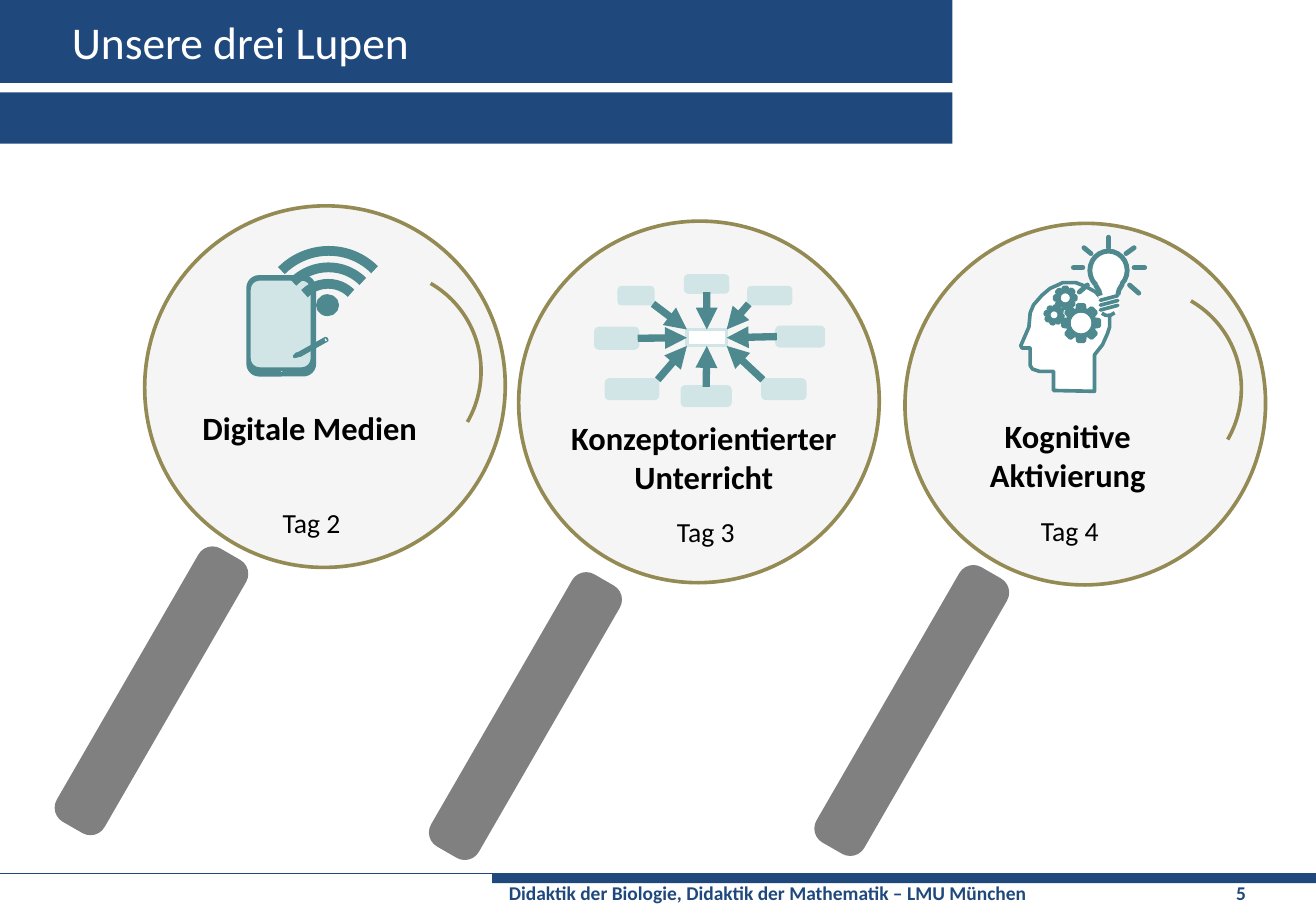
from math import cos, radians, sin

from lxml import etree
from pptx import Presentation
from pptx.dml.color import RGBColor
from pptx.enum.shapes import MSO_CONNECTOR, MSO_SHAPE
from pptx.enum.text import MSO_ANCHOR, MSO_AUTO_SIZE, PP_ALIGN
from pptx.oxml.ns import qn
from pptx.util import Pt

RECT, ROUND, OVAL = MSO_SHAPE.RECTANGLE, MSO_SHAPE.ROUNDED_RECTANGLE, MSO_SHAPE.OVAL
ARC, TOOTH, TIP = MSO_SHAPE.ARC, MSO_SHAPE.TRAPEZOID, MSO_SHAPE.ISOSCELES_TRIANGLE
STRAIGHT, LEFT, CENTER = MSO_CONNECTOR.STRAIGHT, PP_ALIGN.LEFT, PP_ALIGN.CENTER
TOP, MIDDLE = MSO_ANCHOR.TOP, MSO_ANCHOR.MIDDLE
W, H, FONT = 810.75, 567, "Calibri"
C = {"navy": "1F497D", "white": "FFFFFF", "black": "000000", "glass": "D9D9D9",
     "rim": "948A54", "handle": "808080", "teal": "4D898E", "pale": "D2E5E6"}

# Outlines of the head and the bulb
HEAD = [(20.2, 54.7), (11.5, 54.7), (7.2, 53.3), (5.8, 51.1), (5.8, 40.3), (0.7, 40.3), (0, 38.9),
        (5, 27.4), (5.8, 18.7), (7.9, 13.7), (13, 7.9), (18, 3.6), (23, 1.4), (25.9, 0), (33.8, 0),
        (39.6, 2.2), (46.1, 5.8), (50.4, 10.8), (54, 17.3), (54.7, 20.9), (54.7, 27.4),
        (53.3, 31.7), (50.4, 38.2), (45.4, 44.6), (45.4, 67), (20.2, 66.5)]
GLASS = [(5.8, 15.5), (-5, 17.6), (-5.8, 12.6), (-9.4, 7.6), (-11.5, 2.5), (-10.1, -6.1),
         (-6.5, -9.7), (0, -11.9), (6.5, -9.7), (10.8, -4.7), (12.2, -1.8), (11.5, 4.7), (7.2, 11.2)]
SOCKET = [(-5, 18.4), (-5, 24.1), (-3.6, 26.3), (0, 27.7), (4.3, 26.3), (5.8, 22), (5.8, 15.5)]
NECK = [[(-7.9, 9), (-5.8, 12.6), (-5, 15.5)], [(8.6, 8.3), (6.5, 11.9), (5.8, 14.8)]]
RAYS = [(-21.6, -1.8, -15.8, -1.8), (-18, 13.3, -13, 9), (-15.1, -14, -10.8, -10.4),
        (0, -14, 0, -20.5), (10.8, -10.4, 15.8, -14), (15.8, -1.8, 22.3, -1.8), (13, 9, 18.7, 14)]

# Network nodes: direction seen from the hub, then left, top, width, height
HUB = (56.2, 33.1, 24.5, 10.1)
NODES = [((0, -1), (55.4, 0, 25.9, 10.1)), ((-1, 0), (0, 32.4, 25.9, 12.2)),
         ((0, 1), (53.3, 68.4, 29.5, 11.5)), ((1, 0), (111.6, 31.7, 28.8, 11.5)),
         ((-1, -1), (14.4, 7.2, 20.9, 10.1)), ((-1, 1), (6.5, 64.1, 31.7, 11.5)),
         ((1, -1), (94.3, 7.2, 25.9, 10.1)), ((1, 1), (103, 64.1, 25.9, 11.5))]
SITES = {(0, -1): (2, 0), (-1, 0): (3, 1), (0, 1): (0, 2), (1, 0): (1, 3)}

def rgb(name):
    return RGBColor.from_string(C[name])

def paint(sp, fill, line, width):
    sp.shadow.inherit = False
    sp.fill.background()
    sp.line.fill.background()
    if fill:
        sp.fill.solid()
        sp.fill.fore_color.rgb = rgb(fill)
    if line:
        sp.line.color.rgb = rgb(line)
        sp.line.width = Pt(width)
    return sp

def shape(s, kind, x, y, w, h, fill=None, line=None, width=2, rot=0, adj=()):
    sp = s.shapes.add_shape(kind, Pt(x), Pt(y), Pt(w), Pt(h))
    sp.rotation = rot
    for i, value in enumerate(adj):
        sp.adjustments[i] = value
    return paint(sp, fill, line, width)

def centred(s, kind, cx, cy, w, h, *args, **kw):
    return shape(s, kind, cx - w / 2, cy - h / 2, w, h, *args, **kw)

def outline(s, x, y, points, fill, line, width, close=True):
    pts = [(Pt(x + px), Pt(y + py)) for px, py in points]
    fb = s.shapes.build_freeform(*pts[0])
    fb.add_line_segments(pts[1:], close=close)
    return paint(fb.convert_to_shape(), fill, line, width)

def line(s, x1, y1, x2, y2, color, width, arrow=False, cap="flat"):
    c = s.shapes.add_connector(STRAIGHT, Pt(x1), Pt(y1), Pt(x2), Pt(y2))
    c.line.color.rgb, c.line.width = rgb(color), Pt(width)
    ln = c._element.spPr.find(qn("a:ln"))
    ln.set("cap", cap)
    if arrow:
        etree.SubElement(ln, qn("a:tailEnd"), type="triangle")
    etree.SubElement(c._element.spPr, qn("a:effectLst"))
    return c

def text(s, x, y, w, h, lines, size, color, bold=False, align=LEFT, anchor=TOP, wrap=True):
    tf = s.shapes.add_textbox(Pt(x), Pt(y), Pt(w), Pt(h)).text_frame
    tf.word_wrap, tf.vertical_anchor = wrap, anchor
    tf.auto_size = MSO_AUTO_SIZE.NONE if wrap else MSO_AUTO_SIZE.SHAPE_TO_FIT_TEXT
    for i, words in enumerate(lines):
        p = tf.add_paragraph() if i else tf.paragraphs[0]
        p.alignment = align
        r = p.add_run()
        r.text = words
        r.font.name, r.font.size, r.font.bold = FONT, Pt(size), bold
        r.font.color.rgb = rgb(color)
    return tf

def header(s, x, y, w):
    shape(s, RECT, x, y, w, 51.1, "navy")
    shape(s, RECT, x, y + 56.9, w, 31.7, "navy")
    text(s, x + 37.2, y, w - 42.5, 51.1, ["Unsere drei Lupen"], 28, "white", anchor=MIDDLE)

def footer(s, x, y, w):
    bar = x + 303.1
    line(s, x, y, x + w, y, "navy", 0.75)
    shape(s, RECT, bar, y, w - 303.1, 5.8, "navy")
    words = "Didaktik der Biologie, Didaktik der Mathematik – LMU München\t5"
    tf = text(s, bar, y + 0.7, w - 303.1, 22.3, [words], 12, "navy", bold=True)
    tf.margin_left = Pt(10.4)
    tabs = etree.SubElement(tf.paragraphs[0]._p.get_or_add_pPr(), qn("a:tabLst"))
    etree.SubElement(tabs, qn("a:tab"), pos=str(Pt(448)), algn="l")

def lens(s, x, y, handle_y, handle_h, glint):
    glass = shape(s, OVAL, x, y, 221.8, 223.2, "glass", "rim", 2.25, rot=30)
    color = glass._element.spPr.find(qn("a:solidFill")).find(qn("a:srgbClr"))
    etree.SubElement(color, qn("a:alpha"), val="26000")
    shape(s, ROUND, x - 11.8, y + handle_y, 31.7, handle_h, "handle", "handle", 2.25, 30, [0.28])
    if glint:
        shape(s, ARC, x + 82.4, y + 39.6, 124.6, 125.3, None, "rim", 2.25, rot=30)

def caption(s, cx, y, w, lines, day, day_y):
    text(s, cx - w / 2, y, w, 7 + 24 * len(lines), lines, 20, "black", True, CENTER, wrap=False)
    text(s, cx - 24.8, day_y, 52, 27.4, [day], 17, "black", align=CENTER, wrap=False)

def tablet(s, x, y):
    shape(s, ROUND, x, y, 41, 60.5, "teal", "teal")
    shape(s, OVAL, x + 19.4, y + 56.9, 2.9, 2.9, "white", "teal")
    shape(s, ROUND, x + 0.7, y + 1.4, 38.9, 55.4, "pale", "teal")
    # Pen
    shape(s, RECT, x + 30.2, y + 42.5, 19.4, 1.4, "teal", "teal", rot=330.6)
    shape(s, TIP, x + 28.8, y + 47.5, 1.4, 2.2, "teal", "teal", rot=240.6)
    line(s, x + 47.5, y + 38.2, x + 48.2, y + 39.6, "white", 0.75)
    # Radio waves
    for size in (82, 61.5, 41):
        centred(s, ARC, x + 49, y + 24.6, size, size * 0.98, None, "teal", 6, rot=315)
    centred(s, OVAL, x + 49, y + 17.5, 12.2, 11.5, "teal", "teal")

def network(s, x, y):
    def edge(box, dx, dy):
        nx, ny, w, h = box
        return x + nx + w * (1 + dx) / 2, y + ny + h * (1 + dy) / 2

    hub = shape(s, RECT, x + HUB[0], y + HUB[1], *HUB[2:], "white", "pale")
    nodes = [shape(s, ROUND, x + nx, y + ny, w, h, "pale", "pale") for _, (nx, ny, w, h) in NODES]
    for sp, ((dx, dy), box) in zip(nodes, NODES):
        c = line(s, *edge(box, -dx, -dy), *edge(HUB, dx, dy), "teal", 4.5, arrow=True)
        if (dx, dy) in SITES:
            start, end = SITES[dx, dy]
            c.begin_connect(sp, start)
            c.end_connect(hub, end)

def gear(s, cx, cy, size, reach, tooth, turn=0):
    centred(s, OVAL, cx, cy, size * 0.93, size * 0.93, "white", "teal", 2.25)
    for a in range(turn, turn + 360, 45):
        tx, ty = cx + reach * sin(radians(a)), cy - reach * cos(radians(a))
        centred(s, TOOTH, tx, ty, tooth, tooth * 0.72, "teal", "teal", 2.25, a, [0.15])
    centred(s, OVAL, cx, cy, size, size, None, "teal", 2.25)

def bulb(s, cx, cy):
    outline(s, cx, cy, SOCKET, "white", "white", 2)
    outline(s, cx, cy, GLASS, "white", "white", 2)
    shape(s, ARC, cx - 5.8, cy + 16.9, 11.5, 10.8, None, "teal", 2.25, rot=134.5)
    for i in range(3):
        line(s, cx - 5, cy + 18.4 + 3 * i, cx + 5.8, cy + 15.5 + 3 * i, "teal", 2.25, cap="rnd")
    centred(s, ARC, cx, cy, 23, 23.8, None, "teal", 3, adj=[78.28, 27.76])
    for side in NECK:
        outline(s, cx, cy, side, None, "teal", 3, close=False)
    for x1, y1, x2, y2 in RAYS:
        line(s, cx + x1, cy + y1, cx + x2, cy + y2, "teal", 3, cap="rnd")

def thinking_head(s, x, y):
    outline(s, x, y, HEAD, "white", "teal", 2.25)
    gear(s, x + 37.1, y + 24.9, 16.2, 9.4, 5)
    gear(s, x + 20.5, y + 19.9, 7.2, 4.7, 2.1, turn=12)
    gear(s, x + 27.4, y + 9.4, 8.6, 5.4, 2.9)
    bulb(s, x + 54, y - 7.5)

def main():
    prs = Presentation()
    prs.slide_width, prs.slide_height = Pt(W), Pt(H)
    s = prs.slides.add_slide(prs.slide_layouts[6])
    footer(s, 0, 538.5, W)
    header(s, 0, 0, 586.8)
    # Magnifying glasses and what they show
    lens(s, 89.3, 126.7, 203, 192.2, True)
    tablet(s, 152.8, 170.6)
    lens(s, 319.7, 136.1, 209.5, 191.5, False)
    lens(s, 557.7, 137.5, 203.6, 193.7, True)
    thinking_head(s, 628.9, 174.2)
    caption(s, 190.8, 247.7, 149, ["Digitale Medien"], "Tag 2", 308.2)
    caption(s, 433.6, 254.2, 181, ["Konzeptorientierter", "Unterricht"], "Tag 3", 313.9)
    caption(s, 657.8, 253.2, 114, ["Kognitive", "Aktivierung"], "Tag 4", 313.2)
    network(s, 367, 170)
    prs.save("out.pptx")

if __name__ == "__main__":
    main()
